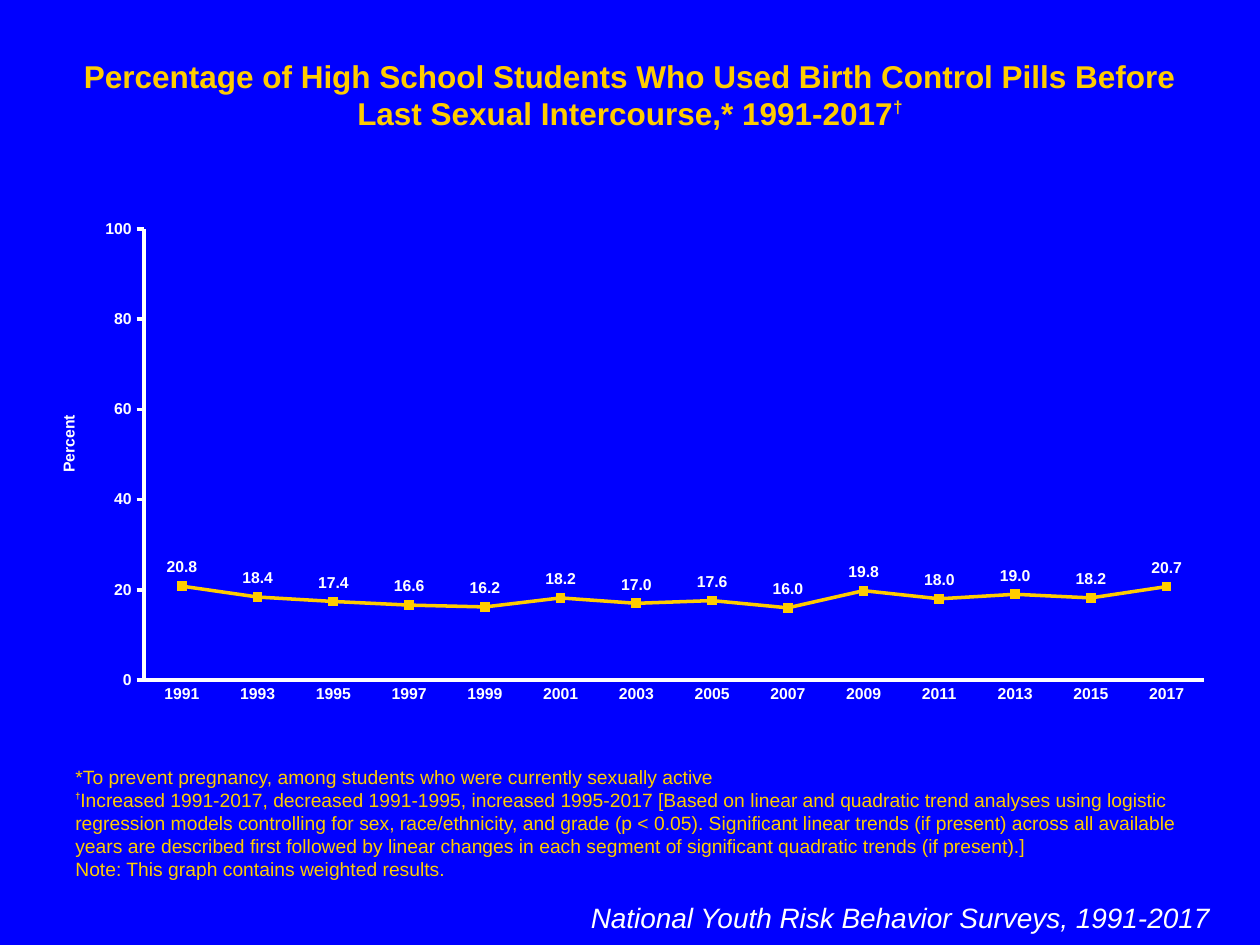
from lxml import etree
from pptx import Presentation
from pptx.chart.data import CategoryChartData
from pptx.dml.color import RGBColor
from pptx.enum.chart import XL_CHART_TYPE, XL_LABEL_POSITION, XL_MARKER_STYLE, XL_TICK_MARK
from pptx.enum.text import MSO_ANCHOR, MSO_AUTO_SIZE, PP_ALIGN
from pptx.oxml.ns import qn
from pptx.util import Inches, Pt

LINE_MARKERS = XL_CHART_TYPE.LINE_MARKERS
ABOVE = XL_LABEL_POSITION.ABOVE
SQUARE = XL_MARKER_STYLE.SQUARE
TICK_NONE, TICK_OUT = XL_TICK_MARK.NONE, XL_TICK_MARK.OUTSIDE
TOP, BOTTOM = MSO_ANCHOR.TOP, MSO_ANCHOR.BOTTOM
FIT = MSO_AUTO_SIZE.SHAPE_TO_FIT_TEXT
LEFT, CENTER, RIGHT = PP_ALIGN.LEFT, PP_ALIGN.CENTER, PP_ALIGN.RIGHT

BLUE, GOLD, WHITE = "0000FF", "FFCC00", "FFFFFF"
COLS, ROWS = 40, 30
TITLE = {"size": Pt(18), "bold": True}
TITLE_MARK = {"size": Pt(17), "bold": True, "baseline": 40}
NOTE = {"size": Pt(11), "bold": False}
NOTE_MARK = {"size": Pt(9), "bold": True, "baseline": 50}
SOURCE = {"size": Pt(16), "italic": True, "color": WHITE}
CHART_TEXT = {"size": Pt(9), "bold": True, "color": WHITE}

PERCENTS = [20.8, 18.4, 17.4, 16.6, 16.2, 18.2, 17.0, 17.6, 16.0, 19.8, 18.0, 19.0, 18.2, 20.7]
YEARS = [str(year) for year in range(1991, 2018, 2)]


def rgb(color):
    """Turn a hex string into a colour."""
    return RGBColor.from_string(color)


class Deck:
    """Holds the style and the current slide."""

    def __init__(self, font, color, background):
        """Start a presentation with one blank slide."""
        self.font, self.color = font, color
        self.prs = Presentation()
        self.prs.slide_width, self.prs.slide_height = Inches(10), Inches(7.5)
        self.s = self.prs.slides.add_slide(self.prs.slide_layouts[6])
        fill = self.s.background.fill
        fill.solid()
        fill.fore_color.rgb = rgb(background)

    def box(self, col, row, cols, rows):
        """Convert grid cells to slide lengths."""
        w, h = self.prs.slide_width / COLS, self.prs.slide_height / ROWS
        return [round(v) for v in (col * w, row * h, cols * w, rows * h)]

    def style(self, font, fmt):
        """Apply a dict of format values to a font."""
        font.name = self.font
        font.color.rgb = rgb(fmt.get("color", self.color))
        for key in ("size", "bold", "italic"):
            if key in fmt:
                setattr(font, key, fmt[key])

    def text(self, cells, paragraphs, align=LEFT, anchor=TOP):
        """Add a text box whose paragraphs are lists of (text, format) runs."""
        tf = self.s.shapes.add_textbox(*self.box(*cells)).text_frame
        for key, value in {"word_wrap": True, "auto_size": FIT, "vertical_anchor": anchor}.items():
            setattr(tf, key, value)
        for i, runs in enumerate(paragraphs):
            p = tf.add_paragraph() if i else tf.paragraphs[0]
            p.alignment = align
            for text, fmt in runs:
                r = p.add_run()
                r.text = text
                self.style(r.font, fmt)
                if "baseline" in fmt:
                    r.font._element.set("baseline", str(fmt["baseline"] * 1000))

    def layout(self, parent, index, **shares):
        """Place a chart part by shares of the chart's size."""
        for old in parent.findall(qn("c:layout")):
            parent.remove(old)
        layout = etree.Element(qn("c:layout"))
        manual = etree.SubElement(layout, qn("c:manualLayout"))
        values = {"xMode": "edge", "yMode": "edge", **shares}
        if "w" in shares:
            values = {"layoutTarget": "inner", **values}
        for tag, value in values.items():
            etree.SubElement(manual, qn(f"c:{tag}")).set("val", str(value))
        parent.insert(index, layout)

    def stroke(self, line, color):
        """Draw a two-point line."""
        line.color.rgb = rgb(color)
        line.width = Pt(2)

    def axis(self, axis, tick, **settings):
        """Format one chart axis."""
        settings = {"has_major_gridlines": False, "major_tick_mark": tick,
                    "minor_tick_mark": TICK_NONE, **settings}
        for key, value in settings.items():
            setattr(axis, key, value)
        self.style(axis.tick_labels.font, CHART_TEXT)
        self.stroke(axis.format.line, WHITE)

    def line_chart(self, cells, categories, values, axis_title):
        """Add a line chart with one labelled series."""
        data = CategoryChartData()
        data.categories = categories
        data.add_series("Series 1", values)
        chart = self.s.shapes.add_chart(LINE_MARKERS, *self.box(*cells), data).chart
        chart.has_legend = chart.has_title = False
        self.style(chart.font, {"size": Pt(18), "color": WHITE})
        self.layout(chart.plots[0]._element.getparent(), 0, x=0.094, y=0.037, w=0.886, h=0.895)

        self.axis(chart.category_axis, TICK_NONE)
        value_axis = chart.value_axis
        self.axis(value_axis, TICK_OUT, minimum_scale=0, maximum_scale=100, major_unit=20)
        self.number_format(value_axis.tick_labels, "#,##0")
        title = value_axis.axis_title
        r = title.text_frame.paragraphs[0].add_run()
        r.text = axis_title
        self.style(r.font, CHART_TEXT)
        self.layout(title._element, 1, x=0.02, y=0.4)

        series = chart.plots[0].series[0]
        series.smooth = False
        self.stroke(series.format.line, GOLD)
        marker = series.marker
        marker.style, marker.size = SQUARE, 5
        marker.format.fill.solid()
        marker.format.fill.fore_color.rgb = rgb(GOLD)
        marker.format.line.color.rgb = rgb(GOLD)
        labels = series.data_labels
        labels.show_value, labels.position = True, ABOVE
        self.number_format(labels, "#,##0.0")
        self.style(labels.font, CHART_TEXT)

    def number_format(self, labels, code):
        """Give labels their own number format."""
        labels.number_format, labels.number_format_is_linked = code, False


def main():
    """Build and save the slide."""
    deck = Deck("Arial", GOLD, BLUE)
    deck.text((2, 1.6, 36, 1.6), [[
        ("Percentage of High School Students Who Used Birth Control Pills Before "
         "Last Sexual Intercourse,* 1991-2017", TITLE),
        ("†", TITLE_MARK),
    ]], CENTER)
    deck.text((2, 27, 36, 1.16), [
        [("*To prevent pregnancy, among students who were currently sexually active", NOTE)],
        [("†", NOTE_MARK),
         ("Increased 1991-2017, decreased 1991-1995, increased 1995-2017 [Based on linear and "
          "quadratic trend analyses using logistic regression models controlling for sex, "
          "race/ethnicity, and grade (p < 0.05). Significant linear trends (if present) across "
          "all available years are described first followed by linear changes in each segment "
          "of significant quadratic trends (if present).]", NOTE)],
        [("Note: This graph contains weighted results.", NOTE)],
    ], anchor=BOTTOM)
    deck.text((18.12, 28.4, 20.68, 1.48),
              [[("National Youth Risk Behavior Surveys, 1991-2017", SOURCE)]], RIGHT)
    deck.line_chart((1, 6.68, 38, 16), YEARS, PERCENTS, "Percent")
    deck.prs.save("out.pptx")


if __name__ == "__main__":
    main()
